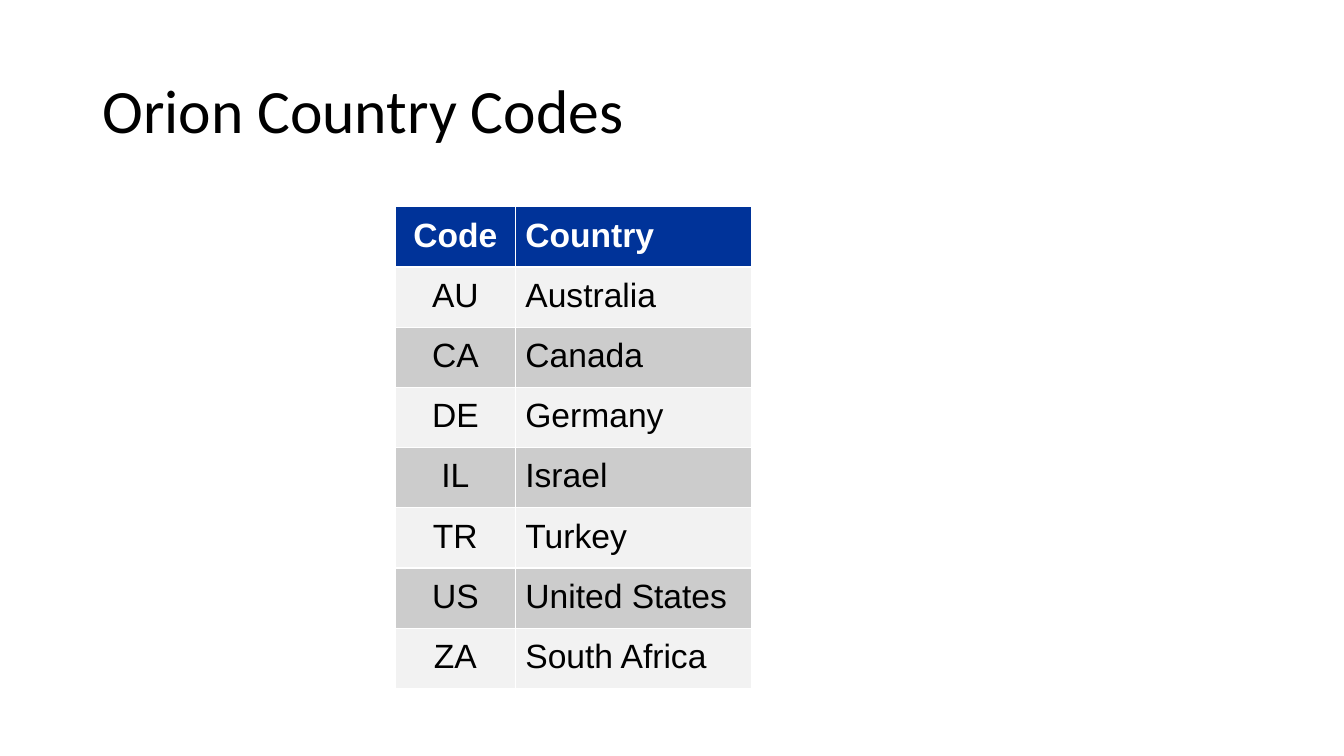
"""Build a slide with a table of Orion country codes."""
import lxml.etree
import pptx
import pptx.dml.color
import pptx.enum.text
import pptx.oxml.ns
import pptx.util

Cm = pptx.util.Cm
Pt = pptx.util.Pt
RGBColor = pptx.dml.color.RGBColor
qn = pptx.oxml.ns.qn

BLACK = RGBColor(0x00, 0x00, 0x00)
WHITE = RGBColor(0xFF, 0xFF, 0xFF)
BLUE = RGBColor(0x00, 0x33, 0x99)
LIGHT_GRAY = RGBColor(0xF2, 0xF2, 0xF2)
MID_GRAY = RGBColor(0xCC, 0xCC, 0xCC)

COUNTRY_CODES = [
    ("Code", "Country"),
    ("AU", "Australia"),
    ("CA", "Canada"),
    ("DE", "Germany"),
    ("IL", "Israel"),
    ("TR", "Turkey"),
    ("US", "United States"),
    ("ZA", "South Africa"),
]
COLUMN_WIDTHS = [Cm(3.03), Cm(5.94)]
ROW_HEIGHT = Cm(1.51)
CELL_MARGIN = Cm(0.25)


def style_run(run, font_name, size, color, bold=False):
    run.font.name = font_name
    run.font.size = Pt(size)
    run.font.color.rgb = color
    run.font.bold = bold


def add_borders(cell, color):
    properties = cell._tc.get_or_add_tcPr()
    for side in ("a:lnL", "a:lnR", "a:lnT", "a:lnB"):
        border = lxml.etree.SubElement(properties, qn(side), w=str(Pt(1)))
        line_fill = lxml.etree.SubElement(border, qn("a:solidFill"))
        lxml.etree.SubElement(line_fill, qn("a:srgbClr"), val=str(color))


deck = pptx.Presentation()
deck.slide_width = Cm(33.87)
deck.slide_height = Cm(19.05)
slide = deck.slides.add_slide(deck.slide_layouts[6])

title = slide.shapes.add_textbox(Cm(2.33), Cm(1.01), Cm(29.21), Cm(3.68))
title.text_frame.word_wrap = True
title.text_frame.vertical_anchor = pptx.enum.text.MSO_ANCHOR.MIDDLE
title.text_frame.text = "Orion Country Codes"
heading = title.text_frame.paragraphs[0]
heading.line_spacing = 0.9
style_run(heading.runs[0], "Calibri", 44, BLACK)

country_table = slide.shapes.add_table(
    len(COUNTRY_CODES), len(COLUMN_WIDTHS), Cm(9.96), Cm(5.21),
    sum(COLUMN_WIDTHS), ROW_HEIGHT * len(COUNTRY_CODES),
).table
for column, width in zip(country_table.columns, COLUMN_WIDTHS):
    column.width = width

for row_index, entry in enumerate(COUNTRY_CODES):
    is_header = row_index == 0
    band = BLUE if is_header else (MID_GRAY, LIGHT_GRAY)[row_index % 2]
    for column_index, wording in enumerate(entry):
        cell = country_table.cell(row_index, column_index)
        cell.margin_left = cell.margin_right = CELL_MARGIN
        cell.margin_top = cell.margin_bottom = CELL_MARGIN
        add_borders(cell, WHITE)
        cell.fill.solid()
        cell.fill.fore_color.rgb = band
        cell.text_frame.text = wording
        label = cell.text_frame.paragraphs[0]
        if column_index == 0:
            label.alignment = pptx.enum.text.PP_ALIGN.CENTER
        style_run(label.runs[0], "Arial", 24, WHITE if is_header else BLACK, is_header)

deck.save("out.pptx")
